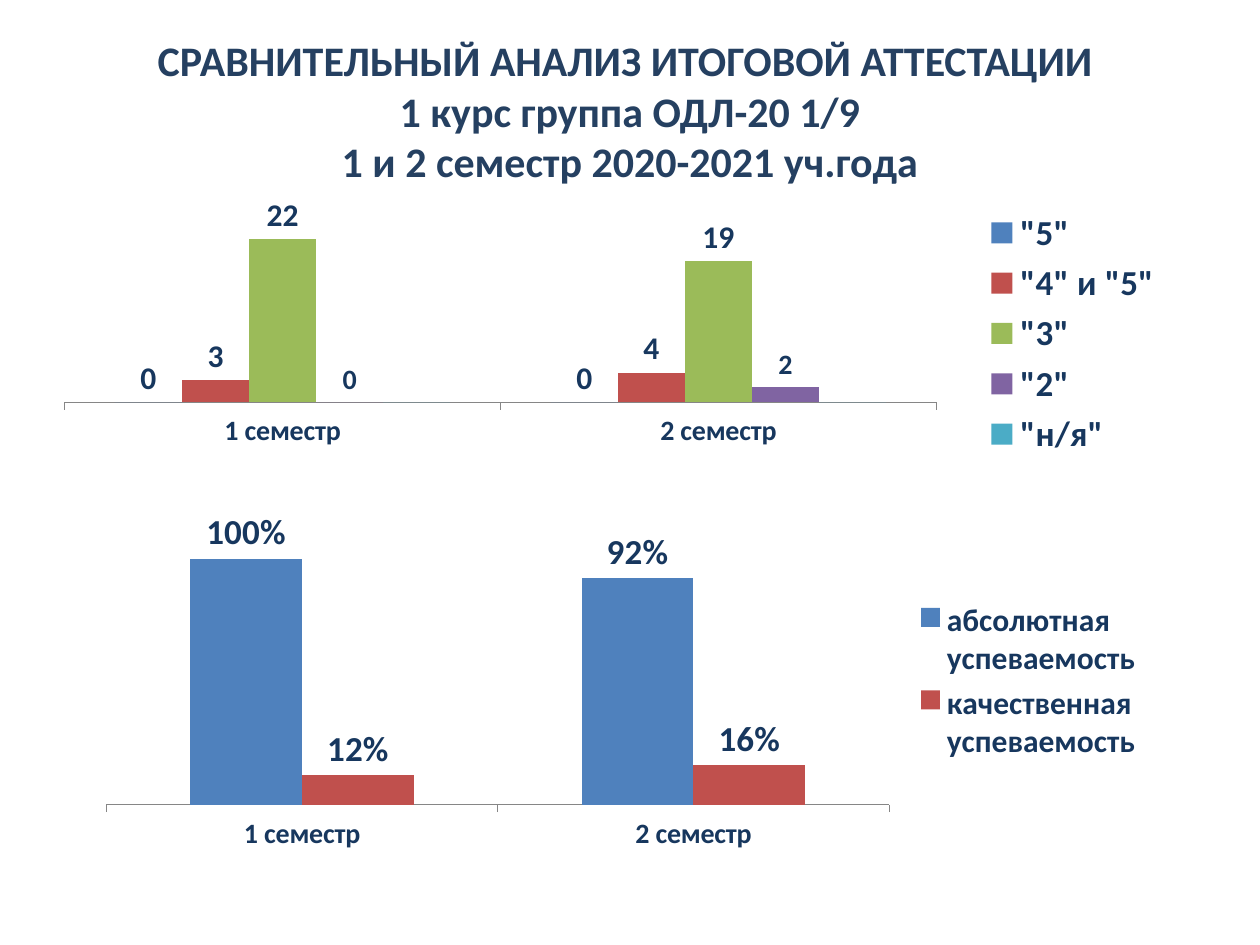
"""Build the slide comparing final attestation results over two semesters."""
from dataclasses import dataclass

from lxml.etree import SubElement
from pptx import Presentation
from pptx.chart.data import CategoryChartData
from pptx.dml.color import RGBColor
from pptx.enum.chart import XL_CHART_TYPE as ChartType
from pptx.enum.chart import XL_LABEL_POSITION as LabelPos
from pptx.enum.chart import XL_LEGEND_POSITION as LegendPos
from pptx.enum.chart import XL_TICK_LABEL_POSITION as TickLabelPos
from pptx.enum.chart import XL_TICK_MARK as TickMark
from pptx.enum.text import MSO_ANCHOR, PP_ALIGN
from pptx.oxml.ns import qn
from pptx.util import Emu, Pt

PX = 914400 / 126
FONT = "Calibri"
TITLE_COLOR = RGBColor(0x25, 0x40, 0x61)
NAVY = RGBColor(0x17, 0x37, 0x5E)
BLACK = RGBColor(0, 0, 0)
AXIS_GRAY = RGBColor(0x86, 0x86, 0x86)
BLUE = RGBColor(0x4F, 0x81, 0xBD)
RED = RGBColor(0xC0, 0x50, 0x4D)
GREEN = RGBColor(0x9B, 0xBB, 0x59)
PURPLE = RGBColor(0x80, 0x64, 0xA2)
TEAL = RGBColor(0x4B, 0xAC, 0xC6)

TITLE = ("СРАВНИТЕЛЬНЫЙ АНАЛИЗ ИТОГОВОЙ АТТЕСТАЦИИ \v"
         "1 курс группа ОДЛ-20 1/9\v"
         "1 и 2 семестр 2020-2021 уч.года")
SEMESTERS = ("1 семестр", "2 семестр")


@dataclass(frozen=True)
class Box:
    x: int
    y: int
    w: int
    h: int

    def emu(self) -> list[Emu]:
        return [Emu(round(v * PX)) for v in (self.x, self.y, self.w, self.h)]


@dataclass(frozen=True)
class Series:
    name: str
    values: tuple[float, ...]
    color: RGBColor
    label_size: int = 0


@dataclass(frozen=True)
class BarChart:
    box: Box
    plot: tuple[float, float, float, float]
    series: tuple[Series, ...]
    legend_size: int
    top: float
    number_format: str


CHARTS = (
    BarChart(Box(35, 195, 1141, 277), (0.026, 0.079, 0.764, 0.67), (
        Series('"5"', (0, 0), BLUE, 18),
        Series('"4" и "5"', (3, 4), RED, 18),
        Series('"3"', (22, 19), GREEN, 18),
        Series('"2"', (0, 2), PURPLE, 16),
        Series('"н/я"', (0, 0), TEAL),
    ), 20, 25, "General"),
    BarChart(Box(85, 503, 1071, 356), (0.02, 0.018, 0.731, 0.83), (
        Series("абсолютная успеваемость", (1, 0.92), BLUE, 20),
        Series("качественная успеваемость", (0.12, 0.16), RED, 20),
        Series("Ряд 3", (), GREEN),
    ), 18, 1.2, "0%"),
)


def apply(target, **values) -> None:
    for name, value in values.items():
        setattr(target, name, value)


def style_font(font, size: int, color: RGBColor = NAVY, bold: bool = True) -> None:
    apply(font, name=FONT, size=Pt(size), bold=bold)
    font.color.rgb = color


def set_plot_layout(chart, plot: tuple[float, ...]) -> None:
    area = chart.plots[0]._element.getparent()
    layout = area.find(qn("c:layout"))
    if layout is None:
        layout = SubElement(area, qn("c:layout"))
        area.insert(0, layout)
    manual = SubElement(layout, qn("c:manualLayout"))
    settings = [("layoutTarget", "inner"), ("xMode", "edge"), ("yMode", "edge")]
    settings += zip("xywh", plot)
    for tag, value in settings:
        SubElement(manual, qn(f"c:{tag}")).set("val", str(value))


def drop_legend_entry(legend, index: int) -> None:
    root = legend._element
    entry = SubElement(root, qn("c:legendEntry"))
    SubElement(entry, qn("c:idx")).set("val", str(index))
    SubElement(entry, qn("c:delete")).set("val", "1")
    root.find(qn("c:legendPos")).addnext(entry)


def add_bar_chart(s, layout: BarChart) -> None:
    data = CategoryChartData(number_format=layout.number_format)
    data.categories = SEMESTERS
    for item in layout.series:
        data.add_series(item.name, item.values)
    chart = s.shapes.add_chart(ChartType.COLUMN_CLUSTERED, *layout.box.emu(), data).chart
    apply(chart, has_title=False, has_legend=True)
    style_font(chart.font, 10, BLACK, False)
    apply(chart.legend, position=LegendPos.RIGHT, include_in_layout=False)
    style_font(chart.legend.font, layout.legend_size)

    apply(chart.value_axis, visible=False, has_major_gridlines=False,
          minimum_scale=0, maximum_scale=layout.top)
    axis = chart.category_axis
    apply(axis, major_tick_mark=TickMark.OUTSIDE, minor_tick_mark=TickMark.NONE,
          tick_label_position=TickLabelPos.LOW)
    axis.format.line.width = Pt(0.75)
    axis.format.line.color.rgb = AXIS_GRAY
    style_font(axis.tick_labels.font, 16)

    plot = chart.plots[0]
    apply(plot, gap_width=150, overlap=0, vary_by_categories=False)
    for index, (bar, item) in enumerate(zip(plot.series, layout.series)):
        bar.format.fill.solid()
        bar.format.fill.fore_color.rgb = item.color
        if item.label_size:
            labels = bar.data_labels
            apply(labels, show_value=True, position=LabelPos.OUTSIDE_END,
                  number_format=layout.number_format, number_format_is_linked=False)
            style_font(labels.font, item.label_size)
        if not item.values:
            drop_legend_entry(chart.legend, index)
    set_plot_layout(chart, layout.plot)


def add_title(s, box: Box, text: str) -> None:
    tf = s.shapes.add_textbox(*box.emu()).text_frame
    apply(tf, word_wrap=True, vertical_anchor=MSO_ANCHOR.MIDDLE)
    p = tf.paragraphs[0]
    apply(p, text=text, alignment=PP_ALIGN.CENTER)
    for r in p.runs:
        style_font(r.font, 24, TITLE_COLOR)


def main() -> None:
    prs = Presentation()
    apply(prs, slide_width=Emu(round(1260 * PX)), slide_height=Emu(round(945 * PX)))
    s = prs.slides.add_slide(prs.slide_layouts[6])
    add_title(s, Box(63, 26, 1134, 169), TITLE)
    for chart in CHARTS:
        add_bar_chart(s, chart)
    prs.save("out.pptx")


if __name__ == "__main__":
    main()
